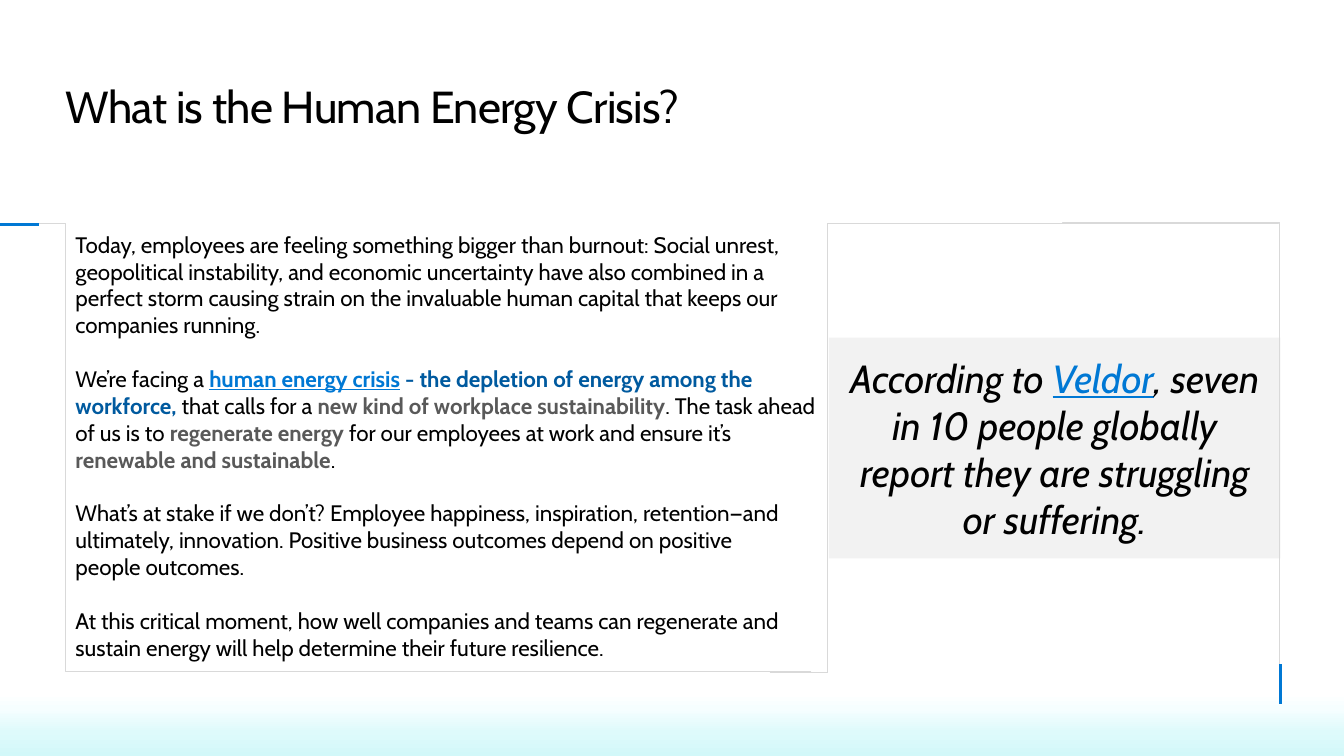
from dataclasses import dataclass

from lxml import etree
from pptx import Presentation
from pptx.dml.color import RGBColor
from pptx.enum.shapes import MSO_CONNECTOR as Connector, MSO_SHAPE as Shape
from pptx.enum.text import MSO_ANCHOR as Anchor, PP_ALIGN as Align
from pptx.oxml.ns import qn
from pptx.util import Inches, Pt


@dataclass(frozen=True)
class Theme:
    font: str = "Cabin"
    text: str = "000000"
    accent: str = "0078D4"
    accent_dark: str = "005A9F"
    muted: str = "595959"
    rule: str = "D9D9D9"
    panel: str = "F2F2F2"
    paper: str = "FFFFFF"
    footer: tuple = ((2, "FFFFFF"), (27, "F6FEFF"), (62, "DEFAFB"), (100, "D2F8F9"))
    title_size: int = 32
    body_size: int = 16
    quote_size: int = 28


class SlideBuilder:
    def __init__(self, slide, theme):
        self.shapes = slide.shapes
        self.theme = theme
        self.styles = {
            "link": (theme.accent, True),
            "strong": (theme.accent_dark, False),
            "muted": (theme.muted, False),
        }

    def shape(self, kind, place, fill):
        shape = self.shapes.add_shape(kind, *map(Inches, place))
        shape.shadow.inherit = False
        shape.fill.solid()
        shape.fill.fore_color.rgb = RGBColor.from_string(fill)
        shape.line.fill.background()
        return shape

    def gradient_band(self, place, stops):
        band = self.shape(Shape.RECTANGLE, place, self.theme.paper)
        band.fill.gradient()
        band.fill.gradient_angle = 270
        stop_list = next(band.element.spPr.iter(qn("a:gsLst")))
        for stop in list(stop_list):
            stop_list.remove(stop)
        for percent, color in stops:
            stop = etree.SubElement(stop_list, qn("a:gs"), pos=str(percent * 1000))
            etree.SubElement(stop, qn("a:srgbClr"), val=color)

    def bracket(self, place, rotation=0, flipped=False):
        """Draw a bent arrow thinned until only a corner line is left."""
        corner = self.shape(Shape.BENT_ARROW, place, self.theme.accent)
        for index, value in enumerate((0.25, 0, 0.25, 0)):
            corner.adjustments[index] = value
        corner.line.color.rgb = RGBColor.from_string(self.theme.rule)
        corner.line.width = Pt(0.75)
        corner.rotation = rotation
        if flipped:
            corner.element.spPr.find(qn("a:xfrm")).set("flipV", "1")

    def accent_line(self, start, end):
        line = self.shapes.add_connector(
            Connector.STRAIGHT, *map(Inches, (*start, *end)))
        line.line.color.rgb = RGBColor.from_string(self.theme.accent)
        line.line.width = Pt(2)
        etree.SubElement(line.element.spPr, qn("a:effectLst"))

    def text_box(self, place):
        return self.shapes.add_textbox(*map(Inches, place))

    def add_text(self, box, paragraphs, size, margins=(0.1, 0.05), gap=0,
                 align=Align.LEFT, anchor=Anchor.TOP, bold_marks=True, italic=None):
        """Fill a box with paragraphs, each a list of (text, style name or None)."""
        frame = box.text_frame
        frame.word_wrap = True
        frame.vertical_anchor = anchor
        frame.margin_left = frame.margin_right = Inches(margins[0])
        frame.margin_top = frame.margin_bottom = Inches(margins[1])
        for index, spans in enumerate(paragraphs):
            para = frame.add_paragraph() if index else frame.paragraphs[0]
            para.alignment = align
            if index:
                para.space_before = Pt(gap)
            para.font.name = self.theme.font
            para.font.size = Pt(size)
            para.font.italic = italic
            para.font.color.rgb = RGBColor.from_string(self.theme.text)
            for text, style in spans:
                first, *rest = text.split("\n")
                self.add_span(para, first, style, bold_marks)
                for line in rest:
                    para.add_line_break()
                    self.add_span(para, line, style, bold_marks)

    def add_span(self, para, text, style, bold):
        span = para.add_run()
        span.text = text
        if style:
            color, underlined = self.styles[style]
            span.font.color.rgb = RGBColor.from_string(color)
            span.font.underline = underlined
            span.font.bold = bold

    def title(self, place, text):
        box = self.text_box(place)
        self.add_text(box, [[(text, None)]], self.theme.title_size, margins=(0, 0))
        for properties in box.element.iter(qn("a:r")):
            properties.get_or_add_rPr().set("spc", "-50")


BODY = [
    [("Today, employees are feeling something bigger than burnout: Social unrest, "
      "geopolitical instability, and economic uncertainty have also combined in a "
      "perfect storm causing strain on the invaluable human capital that keeps our "
      "companies running.", None)],
    [("We’re facing a ", None),
     ("human energy crisis", "link"),
     (" - the depletion of energy among the workforce, ", "strong"),
     ("that calls for a ", None),
     ("new kind of workplace sustainability", "muted"),
     (". The task ahead of us is to ", None),
     ("regenerate energy ", "muted"),
     ("for our employees at work and ensure it’s ", None),
     ("renewable and sustainable", "muted"),
     (".", None)],
    [("What’s at stake if we don’t? Employee happiness, inspiration, retention—and "
      "ultimately, innovation. Positive business outcomes depend on positive\n"
      "people outcomes.", None)],
    [("At this critical moment, how well companies and teams can regenerate and "
      "sustain energy will help determine their future resilience.", None)],
]
QUOTE = [[("According to ", None), ("Veldor", "link"),
          (", seven in 10 people globally report they are struggling or suffering.",
           None)]]


def main():
    deck = Presentation()
    deck.slide_width, deck.slide_height = Inches(13.33), Inches(7.5)
    theme = Theme()
    page = SlideBuilder(deck.slides.add_slide(deck.slide_layouts[6]), theme)

    page.title((0.65, 0.78, 10.34, 0.54), "What is the Human Energy Crisis?")
    page.gradient_band((0, 6.86, 13.33, 0.64), theme.footer)

    page.shape(Shape.RECTANGLE, (0.65, 2.23, 7.54, 4.44), theme.paper)
    page.bracket((-1.8, 4.02, 4.25, 0.65), rotation=90)
    page.bracket((0.65, 6.02, 7.39, 0.64), flipped=True)
    page.bracket((7.64, 2.22, 0.57, 4.45), rotation=180)
    page.accent_line((0, 2.23), (0.39, 2.23))
    page.add_text(page.text_box((0.65, 2.24, 7.55, 4.41)), BODY, theme.body_size,
                  gap=19.2)

    quote = page.shape(Shape.RECTANGLE, (8.22, 3.35, 4.48, 2.19), theme.panel)
    page.add_text(quote, QUOTE, theme.quote_size, margins=(0.2, 0.15),
                  align=Align.CENTER, anchor=Anchor.MIDDLE, bold_marks=None, italic=True)
    page.bracket((8.21, 2.22, 4.47, 2.15))
    page.bracket((9.3, 3.45, 4.63, 2.15), rotation=90)
    page.accent_line((12.7, 6.59), (12.7, 6.98))

    deck.save("out.pptx")


if __name__ == "__main__":
    main()
